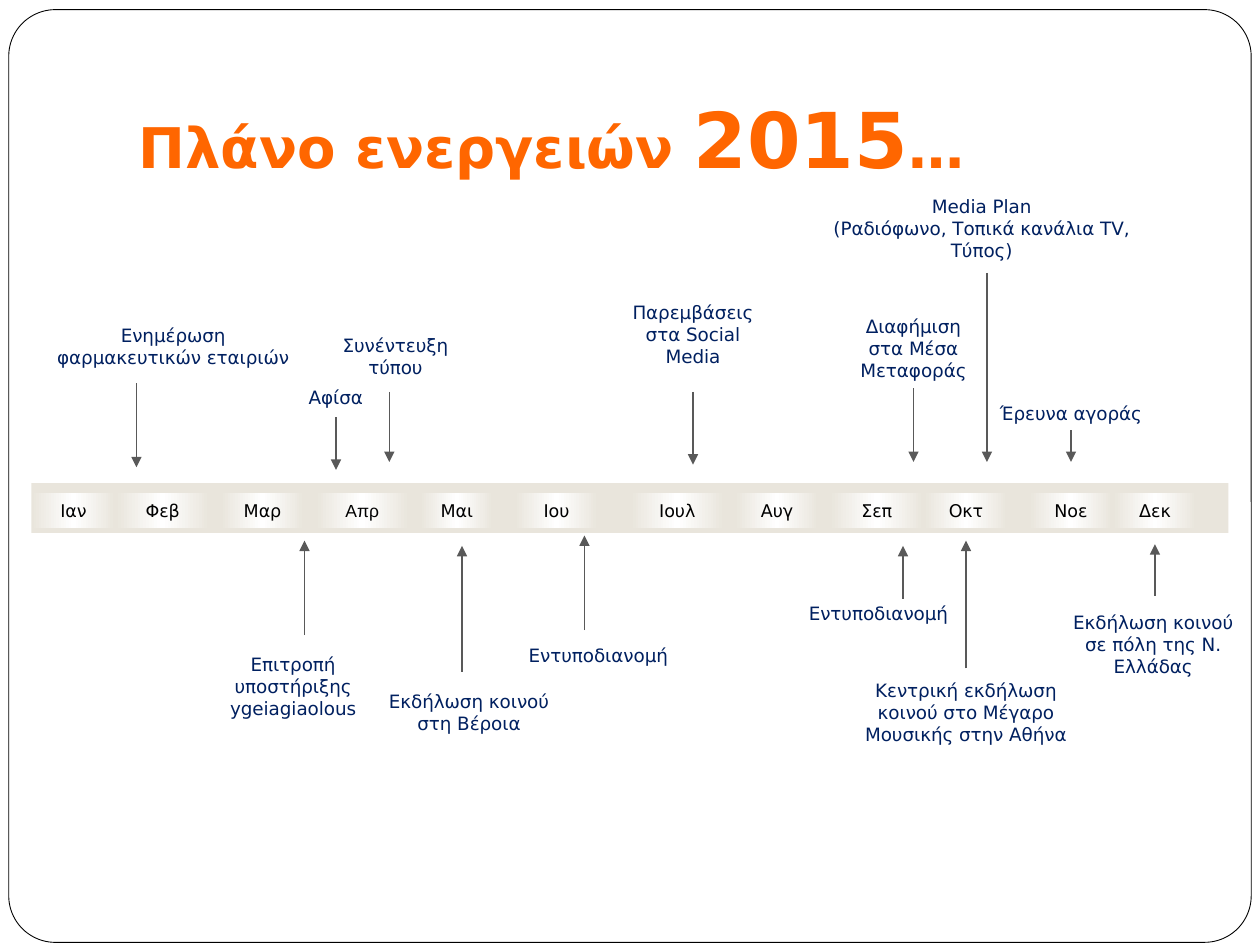
from copy import deepcopy

from pptx import Presentation
from pptx.dml.color import RGBColor
from pptx.enum.shapes import MSO_CONNECTOR, MSO_SHAPE
from pptx.enum.text import MSO_ANCHOR as Anchor, MSO_AUTO_SIZE as AutoSize, PP_ALIGN as Align
from pptx.oxml.ns import qn
from pptx.util import Pt

WHITE = RGBColor(0xFF, 0xFF, 0xFF)
BLACK = RGBColor(0, 0, 0)
ORANGE = RGBColor(0xFF, 0x66, 0x00)
NAVY = RGBColor(0x00, 0x20, 0x60)
GREY = RGBColor(0x59, 0x59, 0x59)
SAND = RGBColor(0xE9, 0xE5, 0xDC)

FONT = "DejaVu Sans"

# name, left, width
MONTHS = [
    ("Ιαν", 18, 48), ("Φεβ", 66, 54), ("Μαρ", 126, 48), ("Απρ", 180, 54),
    ("Μαι", 240, 42), ("Ιου", 294, 48), ("Ιουλ", 360, 54), ("Αυγ", 420, 48),
    ("Σεπ", 474, 54), ("Οκτ", 528, 48), ("Νοε", 588, 48), ("Δεκ", 636, 48),
]

# paragraphs, left, top, width, line count, arrow x, arrow start, arrow end
ACTIONS = [
    (["Ενημέρωση φαρμακευτικών εταιριών"], 24, 181.5, 150, 2, 78, 219, 267),
    (["Αφίσα"], 138, 217, 108, 1, 192, 238.5, 268.5),
    (["Συνέντευξη τύπου"], 172, 187.5, 108, 2, 222.5, 224, 264),
    (["Παρεμβάσεις στα Social Media"], 354, 168.5, 84, 3, 396, 224, 265.5),
    (["Διαφήμιση στα Μέσα Μεταφοράς"], 480, 176.5, 84, 3, 522, 222, 264),
    (["Media Plan", "(Ραδιόφωνο, Τοπικά κανάλια ΤV, Τύπος)"],
     462, 108, 198, 3, 564, 156, 264),
    (["Έρευνα αγοράς"], 564, 226, 96, 1, 612, 246, 264),
    (["Επιτροπή υποστήριξης ygeiagiaolous"], 104.5, 369.5, 126, 3, 174, 363, 309),
    (["Εκδήλωση κοινού στη Βέροια"], 205, 391, 126, 2, 264, 384, 312),
    (["Εντυποδιανομή"], 288, 364.5, 108, 1, 334, 360, 306),
    (["Εντυποδιανομή"], 454, 340.5, 96, 1, 516, 342, 312),
    (["Κεντρική εκδήλωση κοινού στο Μέγαρο Μουσικής στην Αθήνα"],
     486, 384.5, 132, 3, 552, 382, 309),
    (["Εκδήλωση κοινού σε πόλη της Ν. Ελλάδας"], 599, 345.5, 120, 3, 660, 340.5, 311),
]


class TimelineSlide:
    def __init__(self, slide, font=FONT):
        self.slide = slide
        self.font = font

    def add_run(self, paragraph, text, size, color, bold=False, font=None):
        run = paragraph.add_run()
        run.text = text
        run.font.name = font or self.font
        run.font.size = Pt(size)
        run.font.bold = bold
        run.font.color.rgb = color

    def set_margins(self, frame, left, top, right, bottom):
        frame.margin_left, frame.margin_top = Pt(left), Pt(top)
        frame.margin_right, frame.margin_bottom = Pt(right), Pt(bottom)

    def panel(self, kind, left, top, width, height, color):
        shape = self.slide.shapes.add_shape(kind, Pt(left), Pt(top), Pt(width), Pt(height))
        shape.shadow.inherit = False
        shape.fill.solid()
        shape.fill.fore_color.rgb = color
        shape.line.fill.background()
        return shape

    def frame(self):
        shape = self.panel(MSO_SHAPE.ROUNDED_RECTANGLE, 5, 5.5, 710, 533, WHITE)
        shape.adjustments[0] = 0.05
        shape.line.color.rgb = BLACK
        shape.line.width = Pt(0.5)

    def title(self, parts):
        box = self.slide.shapes.add_textbox(Pt(72), Pt(42), Pt(612), Pt(70))
        frame = box.text_frame
        frame.word_wrap = True
        frame.vertical_anchor = Anchor.BOTTOM
        self.set_margins(frame, 7.2, 3.6, 7.2, 7.2)
        for text, size in parts:
            self.add_run(frame.paragraphs[0], text, size, ORANGE, bold=True)

    def month(self, name, left, width, font=None):
        shape = self.panel(MSO_SHAPE.RECTANGLE, left, 282, width, 19.5, SAND)
        self.glow(shape)
        frame = shape.text_frame
        frame.word_wrap = True
        frame.vertical_anchor = Anchor.MIDDLE
        self.set_margins(frame, 1.5, 3.6, 1.5, 3.6)
        paragraph = frame.paragraphs[0]
        paragraph.alignment = Align.CENTER
        self.add_run(paragraph, name, 10, BLACK, font=font)

    def glow(self, shape):
        """Fill from sand at both sides to white in the middle."""
        fill = shape.fill
        fill.gradient()
        fill.gradient_angle = 0
        side, middle = fill.gradient_stops
        side.color.rgb, side.position = SAND, 0
        middle.color.rgb, middle.position = WHITE, 0.5
        stops = shape._element.spPr.find(".//" + qn("a:gsLst"))
        last = deepcopy(stops[0])
        last.set("pos", "100000")
        stops.append(last)

    def label(self, texts, left, top, width, lines):
        height = 7.2 + 12.7 * lines
        box = self.slide.shapes.add_textbox(Pt(left), Pt(top), Pt(width), Pt(height))
        frame = box.text_frame
        frame.word_wrap = True
        frame.auto_size = AutoSize.SHAPE_TO_FIT_TEXT
        for index, text in enumerate(texts):
            paragraph = frame.add_paragraph() if index else frame.paragraphs[0]
            paragraph.alignment = Align.CENTER
            self.add_run(paragraph, text, 10.5, NAVY)

    def arrow(self, x, start, end):
        connector = self.slide.shapes.add_connector(
            MSO_CONNECTOR.STRAIGHT, Pt(x), Pt(start), Pt(x), Pt(end))
        connector.line.color.rgb = GREY
        connector.line.width = Pt(0.75)
        properties = connector._element.spPr
        line = properties.find(qn("a:ln"))
        line.append(line.makeelement(qn("a:tailEnd"), {"type": "triangle"}))
        properties.append(properties.makeelement(qn("a:effectLst"), {}))


def main():
    presentation = Presentation()
    presentation.slide_width, presentation.slide_height = Pt(720), Pt(540)
    timeline = TimelineSlide(presentation.slides.add_slide(presentation.slide_layouts[6]))

    timeline.frame()
    timeline.title([("Πλάνο ενεργειών ", 32), ("2015", 44), ("…", 32)])
    timeline.panel(MSO_SHAPE.RECTANGLE, 18, 276, 684, 28.5, SAND)
    for name, left, width in MONTHS:
        timeline.month(name, left, width, font="Arial" if name == "Απρ" else None)
    for texts, left, top, width, lines, x, start, end in ACTIONS:
        timeline.label(texts, left, top, width, lines)
        timeline.arrow(x, start, end)

    presentation.save("out.pptx")


if __name__ == "__main__":
    main()
